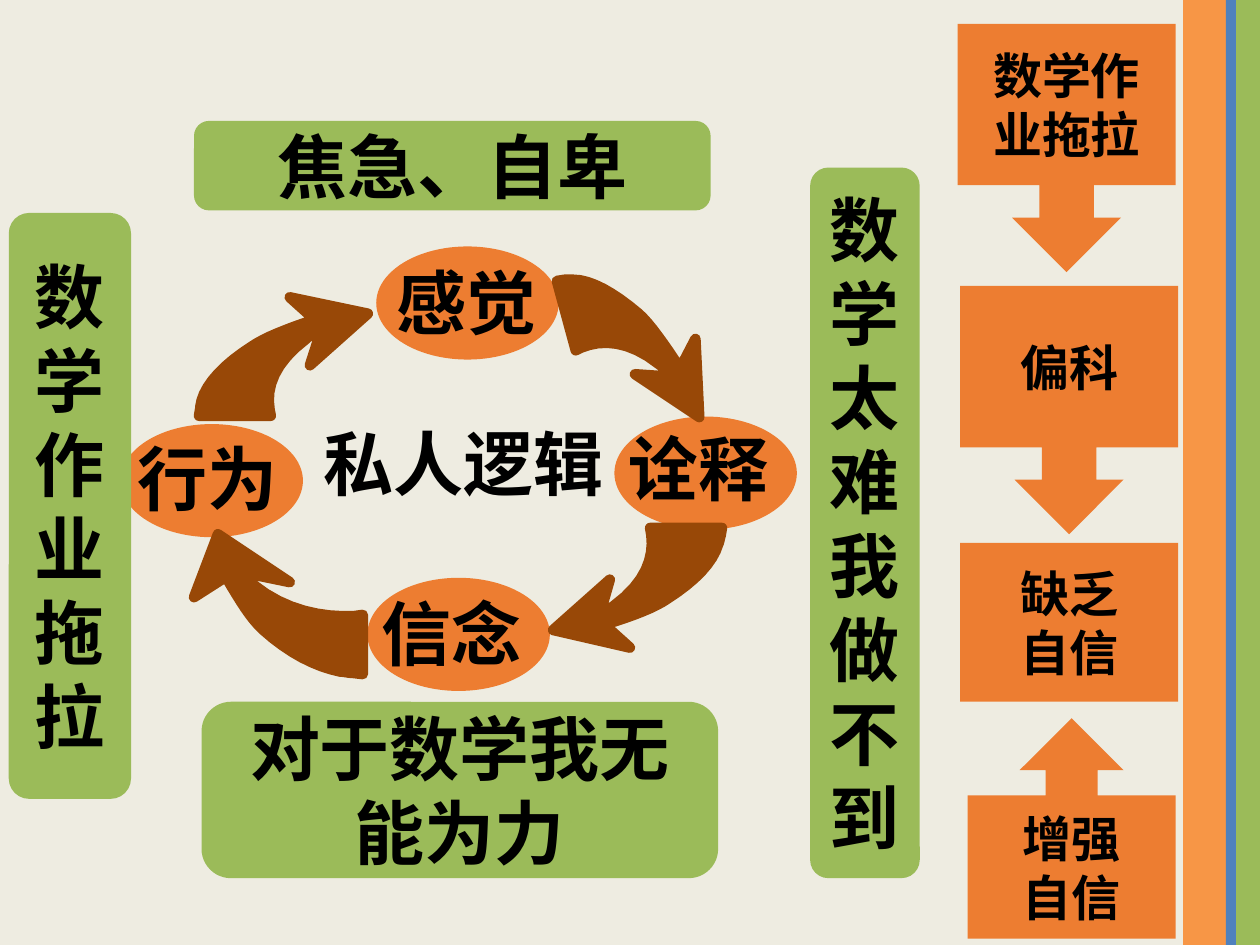
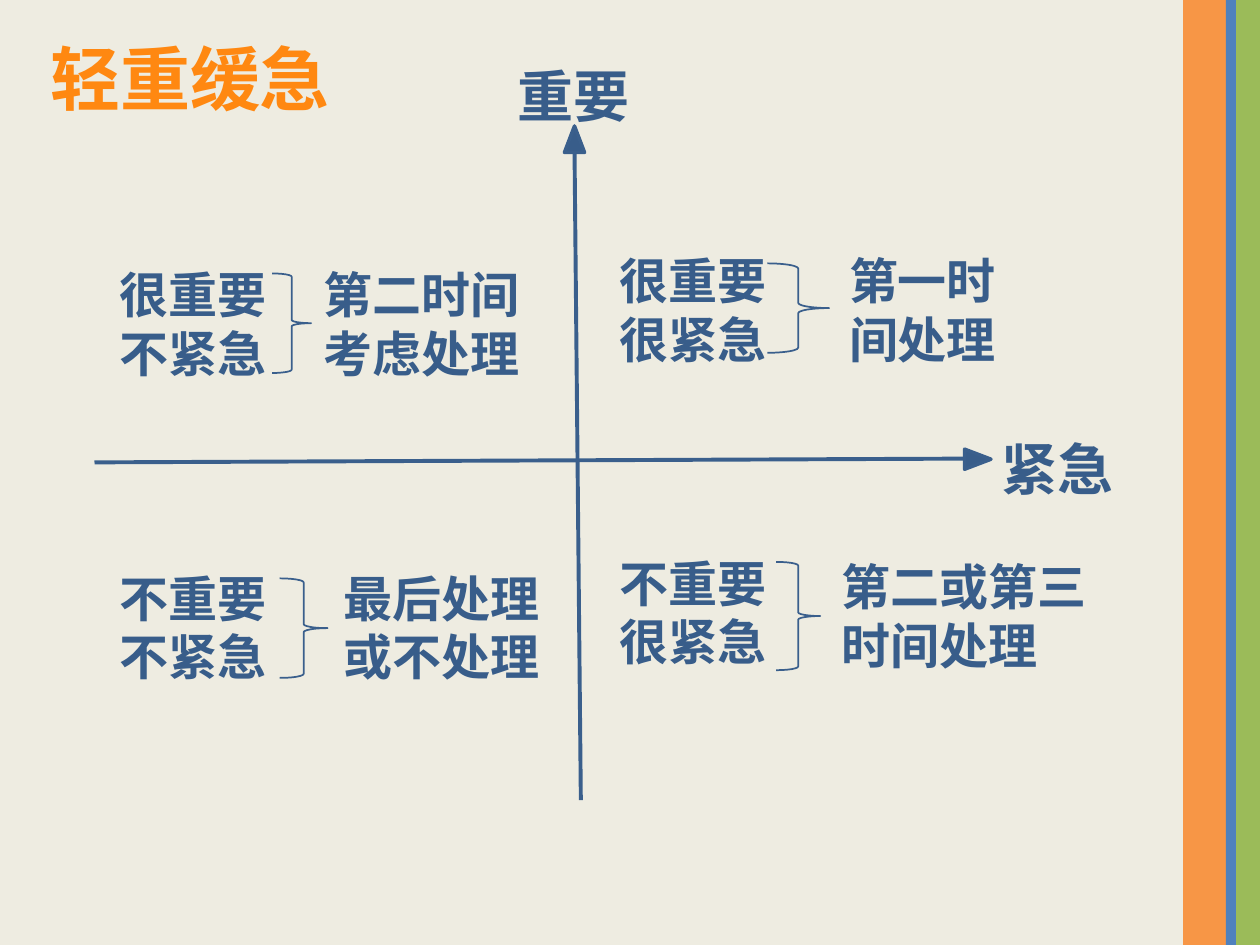
from dataclasses import dataclass
from typing import Any, NamedTuple

from lxml import etree
from pptx import Presentation
from pptx import util as u
from pptx.dml.color import RGBColor
from pptx.enum import lang, shapes, text
from pptx.oxml import ns

Point = tuple[float, float]
Kind = shapes.MSO_SHAPE


@dataclass(frozen=True)
class Theme:
    page: str = "EEECE1"
    amber: str = "F79646"
    blue: str = "4F81BD"
    green: str = "9BBB59"
    orange: str = "ED7D31"
    brown: str = "984807"
    title: str = "FF8811"
    navy: str = "385D8A"
    line: str = "3A5F8C"
    black: str = "000000"
    sans: str = "Noto Sans CJK SC"
    body: str = "Calibri"
    big: int = 40
    mid: int = 32
    small: int = 28


THEME = Theme()


class Box(NamedTuple):
    left: float
    top: float
    width: float
    height: float


class Style(NamedTuple):
    size: int
    color: str
    font: str


class Node(NamedTuple):
    word: str
    oval: Box
    label: Box


class Panel(NamedTuple):
    kind: Any
    box: Box
    fill: str
    size: int
    lines: tuple[str, ...]


class Quad(NamedTuple):
    """One quadrant: a case, a brace and the advice for it."""
    case: tuple[str, ...]
    spot: Box
    brace: Box
    advice: tuple[str, ...]
    place: Box


LARGE = Style(THEME.big, THEME.black, THEME.sans)
OVAL = Style(THEME.big, THEME.black, THEME.body)
HEAD = Style(THEME.big, THEME.title, THEME.sans)
AXIS = Style(THEME.mid, THEME.navy, THEME.body)
NOTE = Style(THEME.small, THEME.navy, THEME.body)

BANDS = (
    (Box(9.39, 0, 0.35, 7.5), THEME.amber),
    (Box(9.81, 0, 0.19, 7.5), THEME.green),
    (Box(9.73, 0, 0.08, 7.5), THEME.blue),
)

# Slide 1: the loop of private logic
NODES = (
    Node("感觉", Box(3, 1.97, 1.42, 0.87), Box(3.05, 2.01, 1.49, 0.77)),
    Node("诠释", Box(4.89, 3.32, 1.42, 0.87), Box(4.89, 3.33, 1.55, 0.77)),
    Node("信念", Box(2.93, 4.6, 1.42, 0.87), Box(2.93, 4.64, 1.46, 0.77)),
    Node("行为", Box(0.97, 3.38, 1.42, 0.87), Box(0.99, 3.41, 1.48, 0.77)),
)

# Every curved arrow follows the same order of lines (L) and curves (C)
STEPS = "LLLLCCLLLCCCL"
ARROWS: tuple[tuple[Point, ...], ...] = (
    ((2.3, 2.36), (2.92, 2.49), (2.46, 2.9), (2.55, 2.62), (2.54, 2.62),
     (2.5, 2.64), (2.46, 2.66), (2.43, 2.69), (2.18, 2.88), (2.11, 3.07),
     (2.14, 3.25), (2.15, 3.3), (1.58, 3.3), (1.59, 3.24), (1.59, 3.22),
     (1.6, 3.19), (1.6, 3.18), (1.64, 3.04), (1.78, 2.89), (2, 2.75),
     (2.1, 2.68), (2.28, 2.61), (2.49, 2.54), (2.5, 2.54)),
    ((5.52, 2.69), (5.55, 3.31), (5.04, 2.97), (5.33, 2.99), (5.33, 2.99),
     (5.3, 2.95), (5.27, 2.92), (5.23, 2.89), (4.99, 2.7), (4.78, 2.69),
     (4.61, 2.76), (4.57, 2.78), (4.42, 2.23), (4.48, 2.22), (4.51, 2.22),
     (4.53, 2.22), (4.55, 2.22), (4.69, 2.22), (4.87, 2.32), (5.07, 2.49),
     (5.16, 2.57), (5.27, 2.73), (5.39, 2.91), (5.4, 2.92)),
    ((5, 5.14), (4.39, 5), (4.84, 4.6), (4.76, 4.88), (4.76, 4.88),
     (4.8, 4.86), (4.84, 4.83), (4.87, 4.81), (5.13, 4.62), (5.19, 4.42),
     (5.17, 4.25), (5.16, 4.19), (5.73, 4.19), (5.72, 4.25), (5.71, 4.28),
     (5.71, 4.3), (5.7, 4.32), (5.66, 4.46), (5.52, 4.61), (5.3, 4.75),
     (5.2, 4.82), (5.02, 4.89), (4.82, 4.95), (4.8, 4.96)),
    ((1.54, 4.74), (1.73, 4.24), (2.3, 4.62), (1.91, 4.54), (1.91, 4.55),
     (1.94, 4.58), (1.97, 4.61), (2.01, 4.64), (2.27, 4.85), (2.56, 4.9),
     (2.81, 4.89), (2.88, 4.88), (2.88, 5.35), (2.79, 5.34), (2.76, 5.34),
     (2.73, 5.33), (2.7, 5.33), (2.5, 5.29), (2.29, 5.18), (2.09, 5),
     (1.99, 4.91), (1.9, 4.76), (1.8, 4.59), (1.79, 4.58)),
)

ROUND, DOWN = Kind.ROUNDED_RECTANGLE, Kind.DOWN_ARROW_CALLOUT
PANELS = tuple(
    [Panel(ROUND, box, THEME.green, THEME.big, (word,)) for box, word in (
        (Box(1.54, 0.96, 4.1, 0.71), "焦急、自卑"),
        (Box(6.43, 1.33, 0.87, 5.64), "数学太难我做不到"),
        (Box(0.07, 1.69, 0.97, 4.65), "数学作业拖拉"),
        (Box(1.6, 5.57, 4.1, 1.4), "对于数学我无能为力"),
    )]
    + [Panel(kind, box, THEME.orange, THEME.small, lines) for kind, box, lines in (
        (DOWN, Box(7.6, 0.19, 1.73, 1.97), ("数学作业拖拉",)),
        (DOWN, Box(7.62, 2.27, 1.73, 1.97), ("偏科",)),
        (Kind.RECTANGLE, Box(7.62, 4.31, 1.73, 1.26), ("缺乏", "自信")),
        (Kind.UP_ARROW_CALLOUT, Box(7.68, 5.7, 1.65, 1.75), ("增强", "自信")),
    )]
)

# Slide 2: urgent and important
QUADS = (
    Quad(("很重要", "很紧急"), Box(4.82, 1.94, 1.42, 1.04), Box(6.09, 2.09, 0.49, 0.71),
         ("第一时间处理",), Box(6.64, 1.94, 1.61, 1.04)),
    Quad(("不重要", "很紧急"), Box(4.82, 4.34, 1.42, 1.04), Box(6.16, 4.46, 0.35, 0.86),
         ("第二或第三", "时间处理"), Box(6.58, 4.37, 2.18, 1.04)),
    Quad(("很重要", "不紧急"), Box(0.85, 2.05, 1.56, 1.04), Box(2.16, 2.17, 0.31, 0.79),
         ("第二时间", "考虑处理"), Box(2.47, 2.05, 1.83, 1.04)),
    Quad(("不重要", "不紧急"), Box(0.85, 4.46, 1.56, 1.04), Box(2.22, 4.59, 0.38, 0.79),
         ("最后处理", "或不处理"), Box(2.63, 4.46, 1.83, 1.04)),
)
TIPS = ((Box(4.48, 1, 0.16, 0.21), 0), (Box(7.68, 3.54, 0.16, 0.21), 90))
AXES = (((0.75, 3.67), (7.66, 3.64)), ((4.56, 1.21), (4.61, 6.35)))


def scale(box: Box) -> list[u.Length]:
    return [u.Inches(v) for v in box]


def paint(shape: Any, fill: str = "", line: str = "", width: float = 0) -> None:
    shape.shadow.inherit = False
    if fill:
        shape.fill.solid()
        shape.fill.fore_color.rgb = RGBColor.from_string(fill)
    else:
        shape.fill.background()
    if line:
        shape.line.color.rgb = RGBColor.from_string(line)
        shape.line.width = u.Pt(width)
    else:
        shape.line.fill.background()


def write(frame: Any, lines: tuple[str, ...], style: Style, align: Any = None) -> None:
    for i, line in enumerate(lines):
        para = frame.add_paragraph() if i else frame.paragraphs[0]
        para.alignment = align
        run = para.add_run()
        run.text = line
        font = run.font
        font.size, font.bold, font.name = u.Pt(style.size), True, style.font
        font.color.rgb = RGBColor.from_string(style.color)
        font.language_id = lang.MSO_LANGUAGE_ID.SIMPLIFIED_CHINESE
        # East Asian face: keeps the line pitch of the body font
        face = etree.SubElement(run._r.get_or_add_rPr(), ns.qn("a:ea"))
        face.set("typeface", THEME.body)


def add_shape(pen: Any, kind: Any, box: Box, fill: str = "", line: str = "",
              width: float = 0) -> Any:
    shape = pen.add_shape(kind, *scale(box))
    paint(shape, fill, line, width)
    return shape


def add_text(pen: Any, box: Box, lines: tuple[str, ...], style: Style,
             wrap: bool = True) -> None:
    frame = pen.add_textbox(*scale(box)).text_frame
    frame.word_wrap = wrap
    frame.auto_size = text.MSO_AUTO_SIZE.SHAPE_TO_FIT_TEXT
    write(frame, lines, style)


def add_panel(pen: Any, panel: Panel) -> None:
    frame = add_shape(pen, panel.kind, panel.box, panel.fill).text_frame
    frame.word_wrap = True
    frame.vertical_anchor = text.MSO_ANCHOR.MIDDLE
    style = Style(panel.size, THEME.black, THEME.sans)
    write(frame, panel.lines, style, text.PP_ALIGN.CENTER)


def add_node(pen: Any, node: Node) -> None:
    group = pen.add_group_shape().shapes
    add_shape(group, Kind.OVAL, node.oval, THEME.orange, THEME.orange, 2)
    add_text(group, node.label, (node.word,), OVAL)


def bend(a: Point, b: Point, c: Point, d: Point, count: int = 8) -> list[Point]:
    """Points along a cubic curve, without its start."""
    out = []
    for i in range(1, count + 1):
        t = i / count
        s = 1 - t
        mix = (s**3, 3 * s * s * t, 3 * s * t * t, t**3)
        out.append((sum(m * p[0] for m, p in zip(mix, (a, b, c, d))),
                    sum(m * p[1] for m, p in zip(mix, (a, b, c, d)))))
    return out


def add_arrow(pen: Any, knots: tuple[Point, ...]) -> None:
    trail, at = [knots[0]], 0
    for step in STEPS:
        if step == "C":
            trail += bend(*knots[at:at + 4])
            at += 3
        else:
            at += 1
            trail.append(knots[at])
    dots = [(u.Inches(x), u.Inches(y)) for x, y in trail]
    path = pen.build_freeform(*dots[0])
    path.add_line_segments(dots[1:], close=True)
    paint(path.convert_to_shape(), THEME.brown, THEME.brown, 6)


def add_line(pen: Any, start: Point, end: Point) -> None:
    line = pen.add_connector(shapes.MSO_CONNECTOR.STRAIGHT,
                             *(u.Inches(v) for v in start + end))
    line.line.color.rgb = RGBColor.from_string(THEME.line)
    line.line.width = u.Pt(2.25)
    etree.SubElement(line._element.spPr, ns.qn("a:effectLst"))


def add_page(deck: Any) -> Any:
    slide = deck.slides.add_slide(deck.slide_layouts[6])
    slide.background.fill.solid()
    slide.background.fill.fore_color.rgb = RGBColor.from_string(THEME.page)
    for box, fill in BANDS:
        add_shape(slide.shapes, Kind.RECTANGLE, box, fill)
    return slide.shapes


def draw_loop(pen: Any) -> None:
    add_text(pen, Box(2.47, 3.29, 2.42, 0.77), ("私人逻辑",), LARGE, wrap=False)
    for node in NODES:
        add_node(pen, node)
    for knots in ARROWS:
        add_arrow(pen, knots)
    for panel in PANELS:
        add_panel(pen, panel)


def draw_grid(pen: Any) -> None:
    add_text(pen, Box(0.3, 0.23, 2.42, 0.77), ("轻重缓急",), HEAD, wrap=False)
    # Axes
    for box, turn in TIPS:
        tip = add_shape(pen, Kind.FLOWCHART_EXTRACT, box, THEME.navy, THEME.line, 2)
        tip.rotation = turn
    for start, end in AXES:
        add_line(pen, start, end)
    add_text(pen, Box(4.01, 0.44, 1.33, 0.64), ("重要",), AXIS)
    add_text(pen, Box(7.85, 3.4, 1.23, 0.64), ("紧急",), AXIS)
    # Quadrants
    for quad in QUADS:
        add_text(pen, quad.spot, quad.case, NOTE)
        add_shape(pen, Kind.RIGHT_BRACE, quad.brace, line=THEME.line, width=1)
        add_text(pen, quad.place, quad.advice, NOTE)


def main() -> None:
    deck = Presentation()
    deck.slide_width, deck.slide_height = u.Inches(10), u.Inches(7.5)
    draw_loop(add_page(deck))
    draw_grid(add_page(deck))
    deck.save("out.pptx")


if __name__ == "__main__":
    main()
